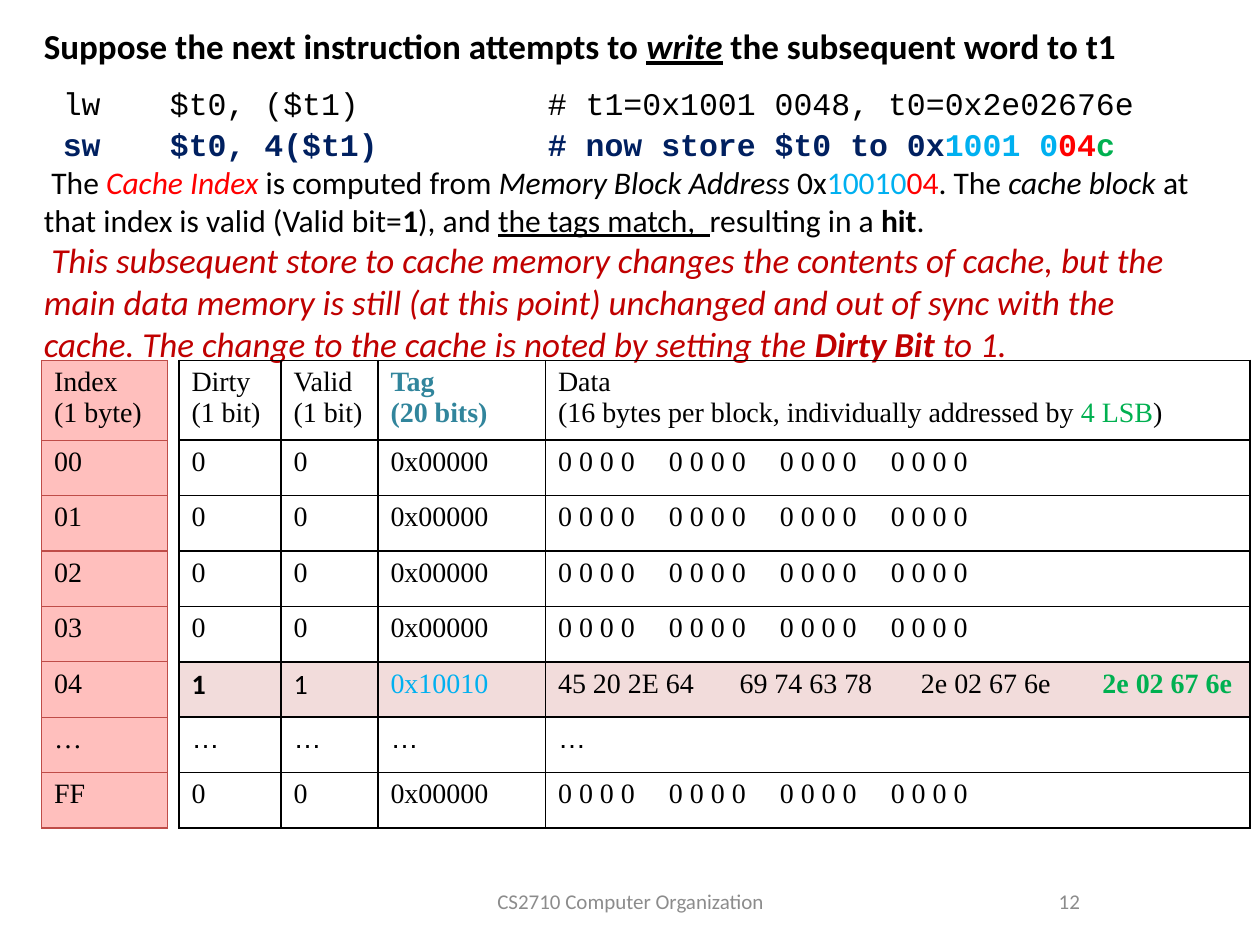
from lxml import etree
from pptx import Presentation
from pptx.dml.color import RGBColor
from pptx.enum import text
from pptx.oxml import ns
from pptx.util import Inches, Pt

COLORS = {
    "black": "000000", "navy": "002060", "blue": "00B0F0", "red": "FF0000",
    "green": "00B050", "crimson": "C00000", "teal": "31859C", "gray": "8C8C8C",
    "pink": "F2DCDB", "rose": "FFBFBD", "brick": "BF4C48",
}
SERIF = "Times New Roman"


def write(paragraph, pieces, font, size, color="black", tabs=(), first=0):
    properties = paragraph._p.get_or_add_pPr()
    if first:
        properties.set("indent", str(Inches(first)))
    if tabs:
        stops = etree.SubElement(properties, ns.qn("a:tabLst"))
        for stop in tabs:
            etree.SubElement(stops, ns.qn("a:tab"), pos=str(Inches(stop)), algn="l")
    for words, style, tint in pieces:
        for number, part in enumerate(words.split("\v")):
            if number:
                paragraph.add_line_break()
                etree.SubElement(paragraph._p[-1], ns.qn("a:rPr"), sz=str(size * 100))
            run = paragraph.add_run()
            run.text = part
            run.font.name = font
            run.font.size = Pt(size)
            run.font.bold = "b" in style
            run.font.italic = "i" in style
            run.font.underline = "u" in style
            run.font.color.rgb = RGBColor.from_string(COLORS[tint or color])


def style_cell(cell, line_color, line_width, fill):
    properties = cell._tc.get_or_add_tcPr()
    for side in ("lnL", "lnR", "lnT", "lnB"):
        line = etree.SubElement(properties, ns.qn("a:" + side), w=str(Pt(line_width)))
        paint = etree.SubElement(line, ns.qn("a:solidFill"))
        etree.SubElement(paint, ns.qn("a:srgbClr"), val=COLORS[line_color])
    if fill:
        cell.fill.solid()
        cell.fill.fore_color.rgb = RGBColor.from_string(COLORS[fill])
    else:
        cell.fill.background()


prs = Presentation()
prs.slide_width, prs.slide_height = Inches(10), Inches(7.5)
slide = prs.slides.add_slide(prs.slide_layouts[6])

explanation = slide.shapes.add_textbox(
    Inches(0.25), Inches(0.67), Inches(9.33), Inches(2.17)).text_frame
explanation.word_wrap = True
explanation.vertical_anchor = text.MSO_ANCHOR.MIDDLE
explanation.margin_bottom = Inches(0.47)

code = {"font": "Courier New", "size": 18, "tabs": (1, 4)}
lines = [
    (0, {"font": "Calibri", "size": 20}, [
        ("Suppose the next instruction attempts to ", "b", None),
        ("write", "biu", None),
        (" the subsequent word to t1", "b", None)]),
    (10, code, [(" lw\t$t0, ($t1)\t# t1=0x1001 0048, t0=0x2e02676e", "", None)]),
    (2, code, [
        (" sw\t$t0, 4($t1)\t# now store $t0 to 0x", "b", "navy"),
        ("1001 0", "b", "blue"), ("04", "b", "red"), ("c", "b", "green")]),
    (0, {"font": "Calibri", "size": 18, "first": 0.06}, [
        ("The ", "", None), ("Cache Index ", "i", "red"),
        ("is computed from ", "", None), ("Memory Block Address", "i", None),
        (" 0x", "", None), ("10010", "", "blue"), ("04", "", "red"),
        (". The ", "", None), ("cache block", "i", None),
        (" at that index is valid (Valid bit=", "", None), ("1", "b", None),
        ("), and ", "", None), ("the tags match,  ", "u", None),
        ("resulting in a ", "", None), ("hit", "b", None), (".", "", None)]),
    (0, {"font": "Calibri", "size": 20, "color": "crimson", "first": 0.06}, [
        ("This subsequent store to cache memory changes the contents of cache, "
         "but the main data memory is still (at this point) unchanged and out of "
         "sync with the cache. The change to the cache is noted by setting the ",
         "i", None),
        ("Dirty Bit", "bi", None), (" to 1.", "i", None)]),
]
for number, (gap, look, pieces) in enumerate(lines):
    paragraph = explanation.add_paragraph() if number else explanation.paragraphs[0]
    write(paragraph, pieces, **look)
    if gap:
        paragraph.space_before = Pt(gap)

for left, width, align, words in (
        (3.42, 3.17, text.PP_ALIGN.CENTER, "CS2710 Computer Organization"),
        (7.17, 1.5, text.PP_ALIGN.RIGHT, "12")):
    footer = slide.shapes.add_textbox(
        Inches(left), Inches(6.95), Inches(width), Inches(0.4)).text_frame
    footer.word_wrap = True
    footer.vertical_anchor = text.MSO_ANCHOR.MIDDLE
    write(footer.paragraphs[0], [(words, "", None)], "Calibri", 12, "gray")
    footer.paragraphs[0].alignment = align

empty_block = ["0", "0", "0x00000", "\t".join(["0 0 0 0"] * 4)]
cache_rows = [
    ["Dirty\v(1 bit)", "Valid\v(1 bit)", [("Tag\v(20 bits)", "b", "teal")],
     [("Data\v(16 bytes per block, individually addressed by ", "", None),
      ("4 LSB", "", "green"), (")", "", None)]],
    *[empty_block] * 4,
    [[("1", "b", None)], "1", [("0x10010", "", "blue")],
     [("45 20 2E 64\t69 74 63 78\t2e 02 67 6e\t", "", None),
      ("2e 02 67 6e", "b", "green")]],
    ["…"] * 4,
    empty_block,
]
index_rows = [[label] for label in
              ("Index\v(1 byte)", "00", "01", "02", "03", "04", "…", "FF")]
HIT_ROW, ELLIPSIS_ROW = 5, 6

for left, widths, rows, line_color, line_width, base_fill in (
        (1.42, (0.81, 0.77, 1.33, 5.59), cache_rows, "black", 1, None),
        (0.33, (1,), index_rows, "brick", 0.75, "rose")):
    table = slide.shapes.add_table(
        len(rows), len(widths), Inches(left), Inches(2.86),
        Inches(sum(widths)), Inches(3.7)).table
    table.first_row = table.horz_banding = False
    for column, width in zip(table.columns, widths):
        column.width = Inches(width)
    for r, row in enumerate(rows):
        table.rows[r].height = Inches(0.44 if r else 0.6)
        for c, content in enumerate(row):
            cell = table.cell(r, c)
            hit = rows is cache_rows and r == HIT_ROW
            style_cell(cell, line_color, line_width, "pink" if hit else base_fill)
            font = SERIF
            if hit and c < 2:
                font = "Calibri"
            elif rows is cache_rows and r == ELLIPSIS_ROW:
                font = "Arial"
            pieces = [(content, "", None)] if isinstance(content, str) else content
            pitch = 1.44 if hit else 0.88
            tabs = [pitch * n for n in (1, 2, 3)] if c == 3 else ()
            write(cell.text_frame.paragraphs[0], pieces, font, 16, tabs=tabs)

prs.save("out.pptx")
